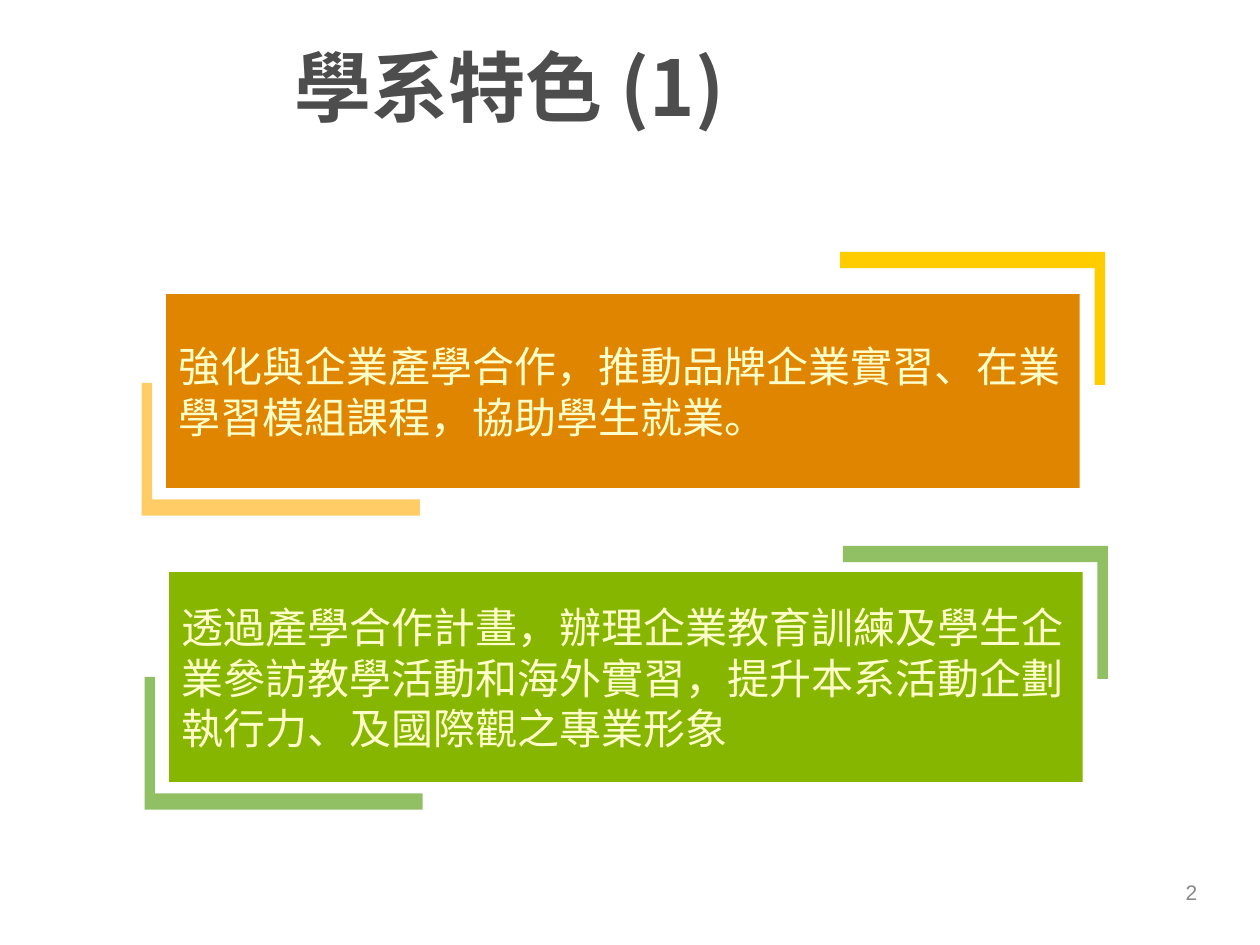
import math

import pptx
import pptx.dml.color
import pptx.enum.shapes
import pptx.enum.text
import pptx.oxml.ns
import pptx.util
from lxml import etree

Pt = pptx.util.Pt
RGBColor = pptx.dml.color.RGBColor
ALIGN = pptx.enum.text.PP_ALIGN

GREY = RGBColor(0x4D, 0x4D, 0x4D)
NUMBER_GREY = RGBColor(0x89, 0x89, 0x89)
CREAM = RGBColor(0xFF, 0xFF, 0xCC)
ORANGE = RGBColor(0xE0, 0x85, 0x00)
PEACH = RGBColor(0xFF, 0xCC, 0x66)
YELLOW = RGBColor(0xFF, 0xCC, 0x00)
GREEN = RGBColor(0x86, 0xB6, 0x00)
SAGE = RGBColor(0x91, 0xBF, 0x63)

CJK_FONT = "Noto Sans CJK SC"
BAR_HEIGHT = 9.3
BAR_WIDTH = 6

FEATURES = [
    {
        "text": "強化與企業產學合作，推動品牌企業實習、在業學習模組課程，協助學生就業。",
        "left": 95, "top": 168, "height": 110.8, "shift": (0, 0),
        "fill": ORANGE, "lower": PEACH, "upper": YELLOW,
    },
    {
        "text": "透過產學合作計畫，辦理企業教育訓練及學生企業參訪教學活動和海外實習，"
                "提升本系活動企劃執行力、及國際觀之專業形象",
        "left": 96.6, "top": 326.9, "height": 120, "shift": (1.6, 168),
        "fill": GREEN, "lower": SAGE, "upper": SAGE,
    },
]


def write_text(box, text, *, size, color, font=CJK_FONT, bold=False,
               align=ALIGN.LEFT, line_spacing=None):
    """Write one formatted paragraph, centred vertically in the box."""
    frame = box.text_frame
    frame.word_wrap = True
    frame.auto_size = pptx.enum.text.MSO_AUTO_SIZE.NONE
    frame.vertical_anchor = pptx.enum.text.MSO_ANCHOR.MIDDLE
    para = frame.paragraphs[0]
    para.alignment = align
    if line_spacing:
        para.line_spacing = Pt(line_spacing)
    span = para.add_run()
    span.text = text
    span.font.size = Pt(size)
    span.font.bold = bold
    span.font.color.rgb = color
    span.font.name = font
    east_asian = etree.SubElement(span.font._element, pptx.oxml.ns.qn("a:ea"))
    east_asian.set("typeface", font)


def paint(shape, color):
    """Give a shape a plain fill without line or shadow."""
    shape.fill.solid()
    shape.fill.fore_color.rgb = color
    shape.line.fill.background()
    shape.shadow.inherit = False


def add_title(page, text):
    """Place the title in its placeholder."""
    title = page.shapes.title
    title.left, title.top = Pt(161.3), Pt(15.1)
    title.width, title.height = Pt(550), Pt(67.7)
    write_text(title, text, size=44, color=GREY, bold=True)


def add_bracket(page, corner_x, corner_y, reach, rise, color):
    """Draw an L-shaped bracket whose arms run from its corner by reach and rise."""
    inner_x = corner_x + math.copysign(BAR_WIDTH, reach)
    inner_y = corner_y + math.copysign(BAR_HEIGHT, rise)
    end_x, end_y = corner_x + reach, corner_y + rise
    outline = [(corner_x, end_y), (corner_x, corner_y), (end_x, corner_y),
               (end_x, inner_y), (inner_x, inner_y), (inner_x, end_y)]
    points = [(Pt(x), Pt(y)) for x, y in outline]
    builder = page.shapes.build_freeform(*points[0])
    builder.add_line_segments(points[1:], close=True)
    paint(builder.convert_to_shape(), color)


def add_feature(page, feature):
    """Draw a text panel framed by two brackets."""
    across, down = feature["shift"]
    add_bracket(page, 81 + across, 294.7 + down, 158.9, -75.9, feature["lower"])
    add_bracket(page, 631.5 + across, 144 + down, -151.4, 75.9, feature["upper"])
    panel = page.shapes.add_shape(
        pptx.enum.shapes.MSO_SHAPE.RECTANGLE,
        Pt(feature["left"]), Pt(feature["top"]), Pt(522), Pt(feature["height"]))
    paint(panel, feature["fill"])
    write_text(panel, feature["text"], size=24, color=CREAM, line_spacing=29)


def add_page_number(page, number):
    """Write the page number at the lower right."""
    box = page.shapes.add_textbox(Pt(575.3), Pt(496.8), Pt(116), Pt(26.6))
    write_text(box, number, size=12, color=NUMBER_GREY, font="Arial", align=ALIGN.RIGHT)


def main():
    """Build and save the deck."""
    deck = pptx.Presentation()
    deck.slide_width, deck.slide_height = Pt(720), Pt(540)
    page = deck.slides.add_slide(deck.slide_layouts[5])
    add_title(page, "學系特色 (1)")
    add_page_number(page, "2")
    for feature in FEATURES:
        add_feature(page, feature)
    deck.save("out.pptx")


if __name__ == "__main__":
    main()
